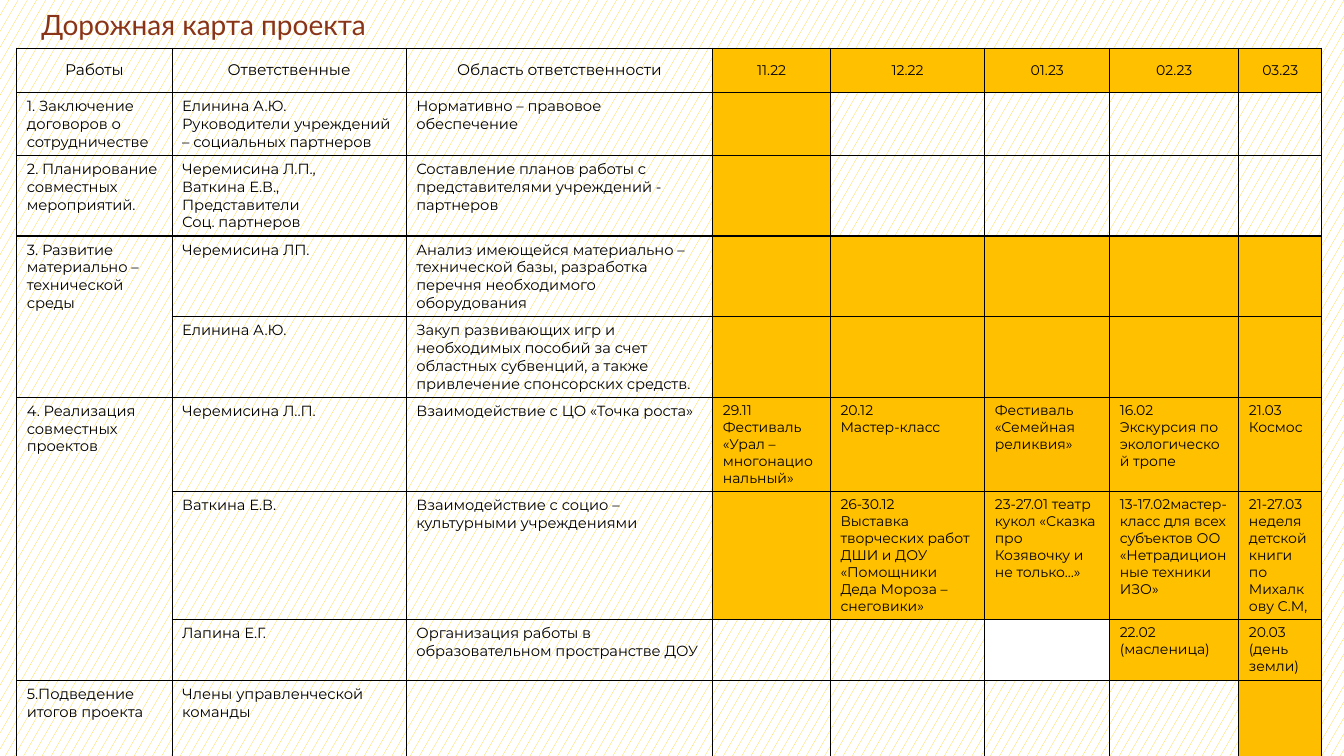
from lxml.etree import SubElement
from pptx import Presentation
from pptx.dml.color import RGBColor
from pptx.enum.dml import MSO_PATTERN
from pptx.enum.text import MSO_ANCHOR as Anchor, PP_ALIGN as Align
from pptx.oxml.ns import qn
from pptx.util import Pt

PX = 9525
COLORS = {
    "title": "893419",
    "black": "000000",
    "white": "FFFFFF",
    "gold": "FFC000",
    "amber": "FFBD00",
    "pattern": "FFCA08",
}
FILLS = {"g": "gold", "a": "amber", "w": "white"}
COLUMN_WIDTHS = [148, 223, 292, 112, 147, 119, 123, 79]
ROW_HEIGHTS = [42, 60, 76, 76, 76, 89, 120, 58, 78]
MERGED_ROWS = [(3, 4), (5, 7)]
FIRST_MONTH = 3

ROADMAP = [
    ("...ggggg", ["Работы", "Ответственные", "Область ответственности",
                  "11.22", "12.22", "01.23", "02.23", "03.23"]),
    ("...g....", ["1. Заключение договоров о сотрудничестве",
                  "Елинина А.Ю.\nРуководители учреждений – социальных партнеров",
                  "Нормативно – правовое обеспечение"]),
    ("...g....", ["2. Планирование совместных мероприятий.",
                  "Черемисина Л.П.,\nВаткина Е.В.,\nПредставители\nСоц. партнеров",
                  "Составление планов работы с представителями учреждений - партнеров"]),
    ("...ggggg", ["3. Развитие материально – технической среды", "Черемисина ЛП.",
                  "Анализ имеющейся материально – технической базы, разработка "
                  "перечня необходимого оборудования"]),
    ("...ggggg", ["", "Елинина А.Ю.",
                  "Закуп развивающих игр и необходимых пособий за счет областных "
                  "субвенций, а также привлечение спонсорских средств."]),
    ("...ggagg", ["4. Реализация совместных проектов", "Черемисина Л..П.",
                  "Взаимодействие с ЦО «Точка роста»",
                  "29.11\nФестиваль «Урал – многонациональный»",
                  "20.12\nМастер-класс",
                  "Фестиваль «Семейная реликвия»",
                  "16.02\nЭкскурсия по экологической тропе",
                  "21.03\nКосмос"]),
    ("...ggggg", ["", "Ваткина Е.В.",
                  "Взаимодействие с социо – культурными учреждениями", "",
                  "26-30.12\nВыставка творческих работ ДШИ и ДОУ «Помощники "
                  "Деда Мороза – снеговики»",
                  "23-27.01 театр кукол «Сказка про Козявочку и не только…»",
                  "13-17.02мастер-класс для всех субъектов ОО "
                  "«Нетрадиционные техники ИЗО»",
                  "21-27.03 неделя детской книги по Михалкову С.М,"]),
    (".....wgg", ["", "Лапина Е.Г.",
                  "Организация работы в образовательном пространстве ДОУ",
                  "", "", "", "22.02\n(масленица)", "20.03\n(день земли)"]),
    (".......a", ["5.Подведение итогов проекта", "Члены управленческой команды"]),
]


def rgb(name):
    return RGBColor.from_string(COLORS[name])


def write_text(frame, text, size, font="Montserrat", color="black",
               align=Align.LEFT, line_spacing=None):
    for index, line in enumerate(text.split("\n")):
        paragraph = frame.paragraphs[0] if index == 0 else frame.add_paragraph()
        paragraph.alignment = align
        if line_spacing:
            paragraph.line_spacing = line_spacing
        run = paragraph.add_run()
        run.text = line
        run.font.name = font
        run.font.size = Pt(size)
        run.font.color.rgb = rgb(color)


class RoadmapSlide:
    def __init__(self, presentation):
        self.slide = presentation.slides.add_slide(presentation.slide_layouts[6])
        self.border_width = Pt(1)

    def background(self):
        fill = self.slide.background.fill
        fill.patterned()
        fill.pattern = MSO_PATTERN.SMALL_CONFETTI
        fill.fore_color.rgb = rgb("pattern")
        fill.back_color.rgb = rgb("white")

    def title(self, text, left, top, width, height):
        shape = self.slide.shapes.add_textbox(left * PX, top * PX, width * PX, height * PX)
        shape.text_frame.word_wrap = True
        shape.text_frame.vertical_anchor = Anchor.MIDDLE
        write_text(shape.text_frame, text, 20, font="Lato", color="title", line_spacing=0.9)

    def borders(self, cell):
        properties = cell._tc.get_or_add_tcPr()
        for side in ("lnL", "lnR", "lnT", "lnB"):
            line = SubElement(properties, qn(f"a:{side}"), w=str(self.border_width))
            solid = SubElement(line, qn("a:solidFill"))
            SubElement(solid, qn("a:srgbClr"), val=COLORS["black"])

    def cell(self, cell, text, fill_code, size, header):
        self.borders(cell)
        if fill_code in FILLS:
            cell.fill.solid()
            cell.fill.fore_color.rgb = rgb(FILLS[fill_code])
        else:
            cell.fill.background()
        if header:
            cell.vertical_anchor = Anchor.MIDDLE
        if text:
            write_text(cell.text_frame, text, size,
                       align=Align.CENTER if header else Align.LEFT)

    def table(self, left, top):
        table = self.slide.shapes.add_table(
            len(ROW_HEIGHTS), len(COLUMN_WIDTHS), left * PX, top * PX,
            sum(COLUMN_WIDTHS) * PX, sum(ROW_HEIGHTS) * PX).table
        table.first_row = table.horz_banding = False
        for column, width in zip(table.columns, COLUMN_WIDTHS):
            column.width = width * PX
        for row, height in zip(table.rows, ROW_HEIGHTS):
            row.height = height * PX
        for first, last in MERGED_ROWS:
            table.cell(first, 0).merge(table.cell(last, 0))
        for row_index, (fills, texts) in enumerate(ROADMAP):
            header = row_index == 0
            for column_index, fill_code in enumerate(fills):
                text = texts[column_index] if column_index < len(texts) else ""
                label_size = 11 if header else 10.5
                size = 10 if column_index >= FIRST_MONTH else label_size
                self.cell(table.cell(row_index, column_index), text, fill_code, size, header)


def main():
    presentation = Presentation()
    presentation.slide_width = 1280 * PX
    presentation.slide_height = 720 * PX
    roadmap = RoadmapSlide(presentation)
    roadmap.background()
    roadmap.title("Дорожная карта проекта", 30, 0, 337, 50)
    roadmap.table(16, 46)
    presentation.save("out.pptx")


if __name__ == "__main__":
    main()
